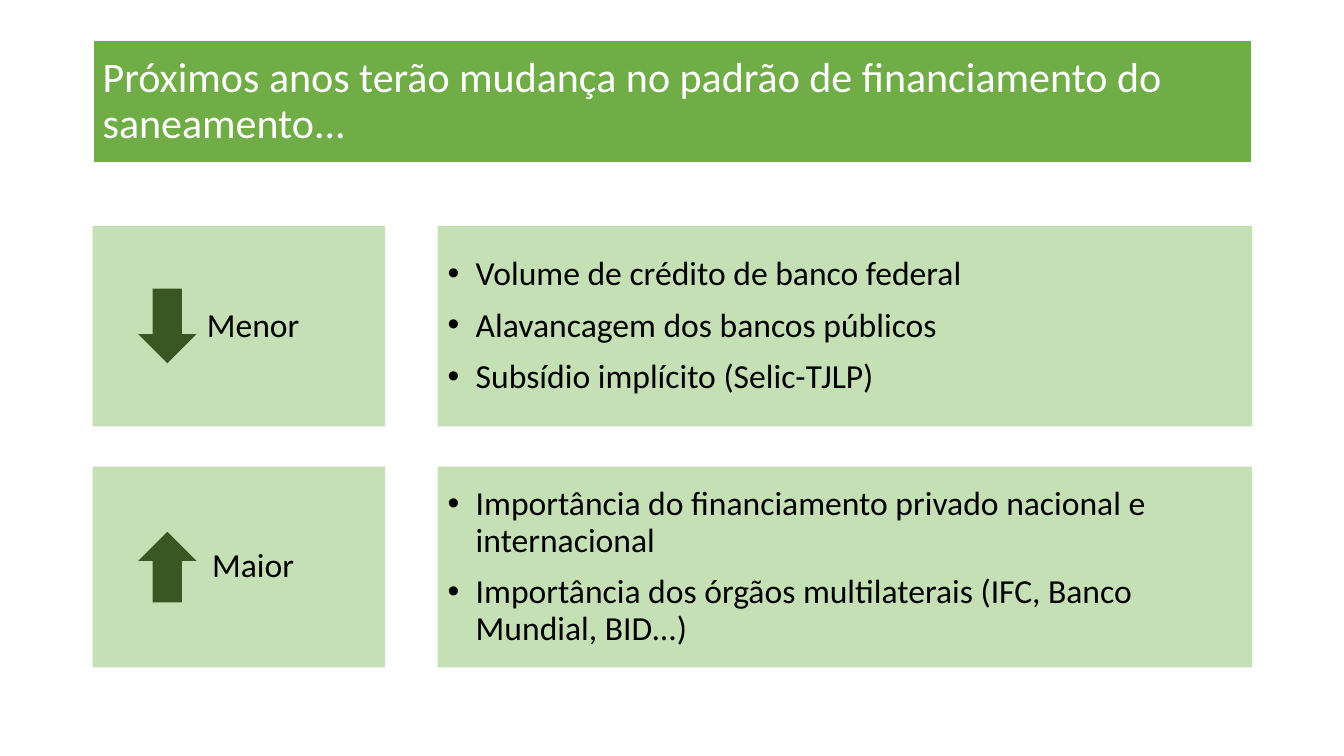
from lxml.etree import SubElement
from pptx import Presentation
from pptx.dml.color import RGBColor
from pptx.enum.shapes import MSO_SHAPE as Preset
from pptx.enum.text import MSO_ANCHOR as Anchor, PP_ALIGN as Align
from pptx.oxml.ns import qn
from pptx.util import Inches, Pt

WHITE = RGBColor(0xFF, 0xFF, 0xFF)
BLACK = RGBColor(0x00, 0x00, 0x00)
GREEN = RGBColor(0x70, 0xAD, 0x47)
PALE_GREEN = RGBColor(0xC5, 0xE0, 0xB4)
DARK_GREEN = RGBColor(0x38, 0x57, 0x23)

FONT = "Calibri"
MARGIN = 0.92
CONTENT_WIDTH = 11.5
LABEL_WIDTH = 2.9
LIST_LEFT = 4.34
LIST_WIDTH = MARGIN + CONTENT_WIDTH - LIST_LEFT
FIRST_ROW_TOP = 2.24
ROW_HEIGHT = 1.99
ROW_STEP = 2.39
ARROW_LEFT = 1.37
ARROW_WIDTH = 0.58
LABEL_SHIFT = 0.28
BULLET_INDENT = 0.28

TITLE = "Próximos anos terão mudança no padrão de financiamento do saneamento..."
ROWS = [
    ("Menor", Preset.DOWN_ARROW, 0.74, [
        "Volume de crédito de banco federal",
        "Alavancagem dos bancos públicos",
        "Subsídio implícito (Selic-TJLP)",
    ]),
    ("Maior", Preset.UP_ARROW, 0.7, [
        "Importância do financiamento privado nacional e internacional",
        "Importância dos órgãos multilaterais (IFC, Banco Mundial, BID...)",
    ]),
]


def add_filled_shape(slide, preset, left, top, width, height, color):
    shape = slide.shapes.add_shape(
        preset, Inches(left), Inches(top), Inches(width), Inches(height))
    shape.shadow.inherit = False
    shape.fill.solid()
    shape.fill.fore_color.rgb = color
    shape.line.fill.background()
    return shape


def add_bullet(paragraph):
    properties = paragraph._p.get_or_add_pPr()
    properties.set("marL", str(Inches(BULLET_INDENT)))
    properties.set("indent", str(-Inches(BULLET_INDENT)))
    SubElement(properties, qn("a:buFont"), typeface="Arial")
    SubElement(properties, qn("a:buChar"), char="•")


def write(shape, lines, size, color, align=Align.LEFT, bullets=False, shift=0):
    """Fill a shape with paragraphs; shift widens the left inset."""
    frame = shape.text_frame
    frame.word_wrap = True
    frame.vertical_anchor = Anchor.MIDDLE
    frame.margin_left = Inches(0.1 + shift)
    frame.margin_right = Inches(0.1)
    frame.margin_top = frame.margin_bottom = Inches(0.05)
    for index, line in enumerate(lines):
        paragraph = frame.add_paragraph() if index else frame.paragraphs[0]
        paragraph.text = line
        paragraph.alignment = align
        paragraph.line_spacing = 0.9
        if index:
            paragraph.space_before = Pt(11)
        if bullets:
            add_bullet(paragraph)
        paragraph.font.name = FONT
        paragraph.font.size = Pt(size)
        paragraph.font.color.rgb = color


def add_row(slide, top, label, arrow, arrow_height, items):
    label_box = add_filled_shape(slide, Preset.RECTANGLE, MARGIN, top,
                                 LABEL_WIDTH, ROW_HEIGHT, PALE_GREEN)
    write(label_box, [label], 24, BLACK, Align.CENTER, shift=LABEL_SHIFT)
    add_filled_shape(slide, arrow, ARROW_LEFT, top + (ROW_HEIGHT - arrow_height) / 2,
                     ARROW_WIDTH, arrow_height, DARK_GREEN)
    list_box = add_filled_shape(slide, Preset.RECTANGLE, LIST_LEFT, top,
                                LIST_WIDTH, ROW_HEIGHT, PALE_GREEN)
    write(list_box, items, 24, BLACK, bullets=True)


def main():
    presentation = Presentation()
    presentation.slide_width = Inches(13.33)
    presentation.slide_height = Inches(7.5)
    slide = presentation.slides.add_slide(presentation.slide_layouts[6])

    title = add_filled_shape(slide, Preset.RECTANGLE, MARGIN, 0.4,
                             CONTENT_WIDTH, 1.22, GREEN)
    title.line.color.rgb = WHITE
    title.line.width = Pt(1.5)
    write(title, [TITLE], 30, WHITE)

    for index, row in enumerate(ROWS):
        add_row(slide, FIRST_ROW_TOP + index * ROW_STEP, *row)
    presentation.save("out.pptx")


if __name__ == "__main__":
    main()
